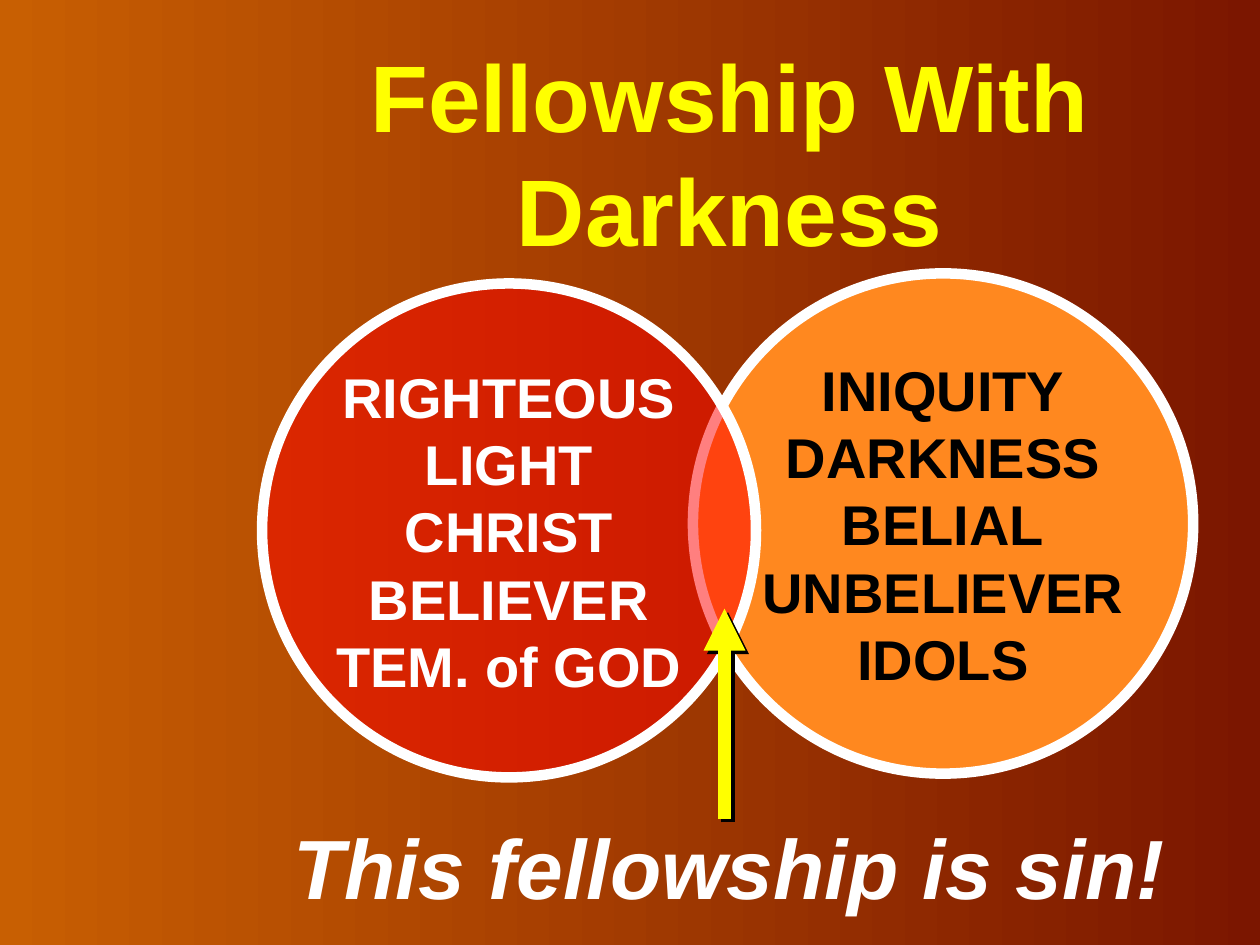
from lxml import etree
from pptx import Presentation
from pptx.dml.color import RGBColor
from pptx.enum import shapes, text
from pptx.oxml import ns
from pptx.util import Inches, Pt

COLORS = {
    "amber": "C85F02",
    "maroon": "7B1600",
    "yellow": "FFFF00",
    "white": "FFFFFF",
    "orange": "FF881F",
    "red": "FF0000",
    "black": "000000",
}
FONT = "Arial"


def rgb(name):
    return RGBColor.from_string(COLORS[name])


def paint_background(slide):
    fill = slide.background.fill
    fill.gradient()
    fill.gradient_angle = 0
    for stop, name in zip(fill.gradient_stops, ("amber", "maroon")):
        stop.color.rgb = rgb(name)
    for stop, position in zip(fill.gradient_stops, (0, 1)):
        stop.position = position


def write_lines(frame, lines, size, color, italic=False):
    frame.vertical_anchor = text.MSO_ANCHOR.MIDDLE
    for index, line in enumerate(lines):
        paragraph = frame.add_paragraph() if index else frame.paragraphs[0]
        paragraph.alignment = text.PP_ALIGN.CENTER
        run = paragraph.add_run()
        run.text = line
        run.font.name = FONT
        run.font.size = Pt(size)
        run.font.bold = True
        run.font.italic = italic
        run.font.color.rgb = rgb(color)


def add_banner(slide, box, wording, size, color, italic=False):
    banner = slide.shapes.add_textbox(*map(Inches, box))
    banner.text_frame.word_wrap = True
    write_lines(banner.text_frame, [wording], size, color, italic)


def add_circle(slide, box, lines, fill, color, opacity=100):
    circle = slide.shapes.add_shape(shapes.MSO_SHAPE.OVAL, *map(Inches, box))
    circle.shadow.inherit = False
    circle.fill.solid()
    circle.fill.fore_color.rgb = rgb(fill)
    if opacity < 100:
        tint = circle._element.spPr.find(ns.qn("a:solidFill"))[0]
        etree.SubElement(tint, ns.qn("a:alpha"), val=str(opacity * 1000))
    circle.line.color.rgb = rgb("white")
    circle.line.width = Pt(6)
    circle.text_frame.word_wrap = False
    write_lines(circle.text_frame, lines, 32, color)


def add_overlap_arrow(slide, x, bottom, top):
    arrow = slide.shapes.add_connector(
        shapes.MSO_CONNECTOR.STRAIGHT, *map(Inches, (x, bottom, x, top)))
    arrow.line.color.rgb = rgb("yellow")
    arrow.line.width = Pt(8)
    etree.SubElement(arrow.line._get_or_add_ln(), ns.qn("a:tailEnd"), type="triangle")
    effects = etree.SubElement(arrow._element.spPr, ns.qn("a:effectLst"))
    shadow = etree.SubElement(
        effects, ns.qn("a:outerShdw"), blurRad="0", dist=str(Pt(2.8)),
        dir=str(45 * 60000), algn="ctr", rotWithShape="0")
    etree.SubElement(shadow, ns.qn("a:srgbClr"), val=COLORS["black"])


def main():
    deck = Presentation()
    deck.slide_width, deck.slide_height = Inches(10), Inches(7.5)
    slide = deck.slides.add_slide(deck.slide_layouts[6])
    paint_background(slide)
    add_banner(slide, (1.58, 0.33, 8.42, 1.75), "Fellowship With Darkness", 54, "yellow")
    add_banner(slide, (1.58, 6.25, 8.42, 1.25), "This fellowship is sin!", 48, "white", True)
    add_circle(slide, (5.5, 2.17, 3.97, 3.97),
               ["INIQUITY", "DARKNESS", "BELIAL", "UNBELIEVER", "IDOLS"],
               "orange", "black")
    add_circle(slide, (2.08, 2.25, 3.92, 3.92),
               ["RIGHTEOUS", "LIGHT", "CHRIST", "BELIEVER", "TEM. of GOD"],
               "red", "white", 50)
    add_overlap_arrow(slide, 5.75, 6.5, 4.83)
    deck.save("out.pptx")


if __name__ == "__main__":
    main()
